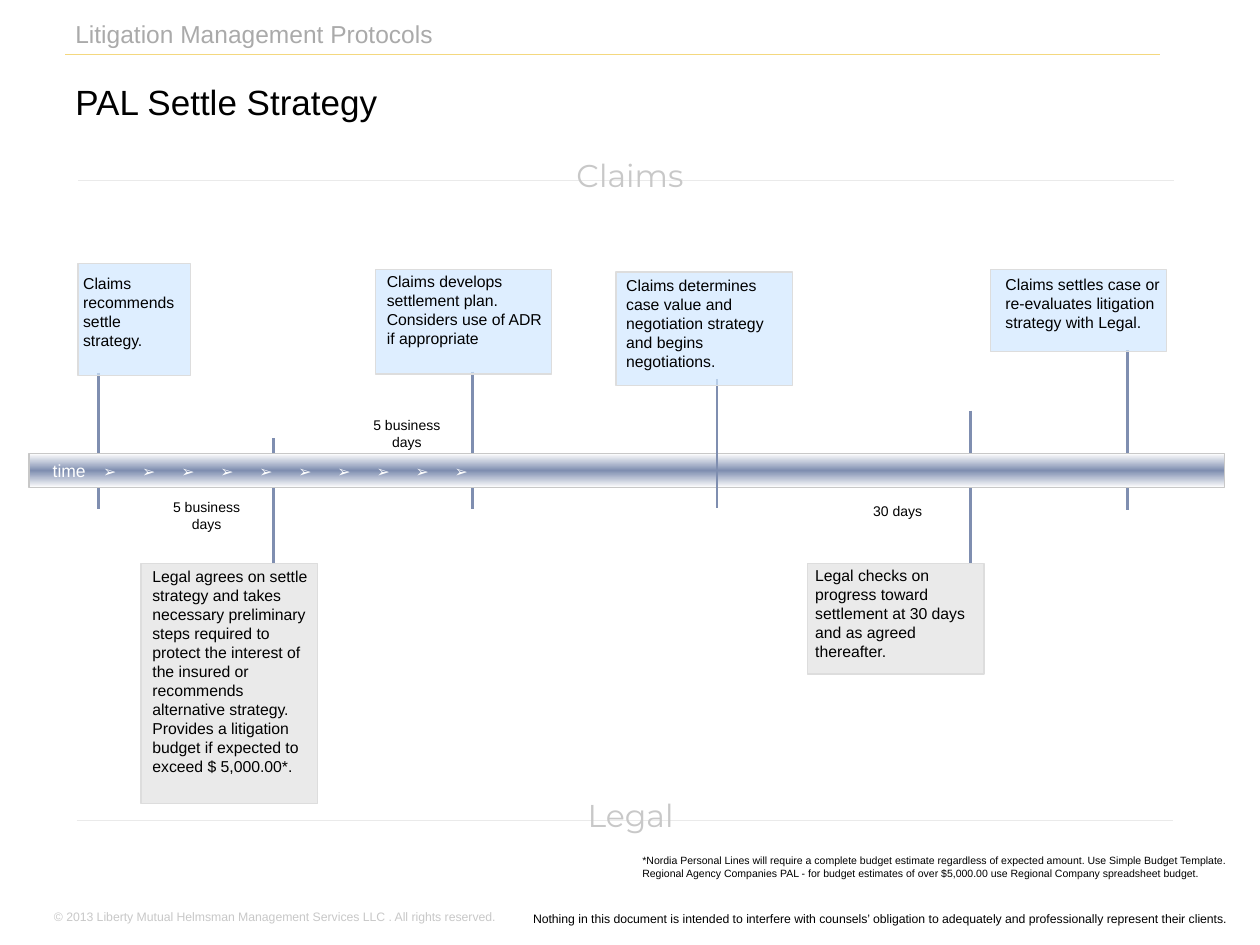
from copy import deepcopy
from dataclasses import dataclass

from pptx import Presentation
from pptx.dml.color import RGBColor
from pptx.enum.shapes import MSO_CONNECTOR as Connector, MSO_SHAPE as Shape
from pptx.enum.text import MSO_ANCHOR as Anchor, PP_ALIGN as Align
from pptx.oxml.ns import qn
from pptx.slide import Slide
from pptx.util import Inches, Pt
from lxml.etree import SubElement

COLORS = {
    "black": "000000", "white": "FFFFFF", "gold": "F4D87F", "heading": "AAAAAA",
    "muted": "C8C8C8", "rule": "EAEAEA", "edge": "DDDDDD", "stem": "7F8EB0",
    "claims": "D1E8FF", "legal": "EAEAEA",
}
OPACITY = {"claims": 70, "legal": 100}


def rgb(name):
    return RGBColor.from_string(COLORS[name])


@dataclass
class TimelineSlide:
    """Draws styled timeline elements on one slide."""

    slide: Slide
    font: str = "Arial"
    stem_width: float = 1.5
    edge_width: float = 0.75

    def style(self, font, size, color):
        font.name, font.size = self.font, Pt(size)
        font.color.rgb = rgb(color)

    def text(self, words, place, size, color="black", align=Align.LEFT,
             anchor=Anchor.TOP, inset=True, font=None):
        label = self.slide.shapes.add_textbox(*map(Inches, place))
        frame = label.text_frame
        frame.word_wrap = True
        frame.vertical_anchor = anchor
        if not inset:
            frame.margin_left = frame.margin_right = 0
            frame.margin_top = frame.margin_bottom = 0
        frame.text = words
        for paragraph in frame.paragraphs:
            paragraph.alignment = align
            for run in paragraph.runs:
                self.style(run.font, size, color)
                run.font.name = font or self.font
        return frame

    def line(self, start, end, color, width):
        rule = self.slide.shapes.add_connector(
            Connector.STRAIGHT, *map(Inches, (*start, *end)))
        rule.line.color.rgb = rgb(color)
        rule.line.width = Pt(width)
        SubElement(rule._element.spPr, qn("a:effectLst"))

    def rectangle(self, place, edge):
        panel = self.slide.shapes.add_shape(Shape.RECTANGLE, *map(Inches, place))
        panel.shadow.inherit = False
        panel.line.color.rgb = rgb(edge)
        panel.line.width = Pt(self.edge_width)
        return panel

    def step(self, side, words, panel_place, words_place, stem):
        x, top, bottom = stem
        self.line((x, top), (x, bottom), "stem", self.stem_width)
        panel = self.rectangle(panel_place, "edge")
        panel.fill.solid()
        panel.fill.fore_color.rgb = rgb(side)
        if OPACITY[side] < 100:
            tint = panel._element.spPr.find(qn("a:solidFill"))[0]
            SubElement(tint, qn("a:alpha"), val=str(OPACITY[side] * 1000))
        self.text(words, words_place, 9, inset=False)

    def time_bar(self, place):
        bar = self.rectangle(place, "muted")
        bar.fill.gradient()
        bar.fill.gradient_angle = 270
        stops = bar._element.spPr.find(qn("a:gradFill")).find(qn("a:gsLst"))
        stops.append(deepcopy(stops[-1]))
        shades = zip(bar.fill.gradient_stops, (0, 0.5, 1), ("white", "stem", "white"))
        for stop, position, color in shades:
            stop.position = position
            stop.color.rgb = rgb(color)

    def time_arrows(self, place, count, first, pitch):
        paragraph = self.text("time", place, 10, "white").paragraphs[0]
        tabs = SubElement(paragraph._p.get_or_add_pPr(), qn("a:tabLst"))
        for i in range(count):
            SubElement(tabs, qn("a:tab"), pos=str(Inches(first + i * pitch)), algn="l")
        arrows = paragraph.add_run()
        arrows.text = "\t➢" * count
        self.style(arrows.font, 9, "white")


STEPS = [
    ("claims", "Claims settles case or re-evaluates litigation strategy with Legal.",
     (7.86, 2.14, 1.4, 0.65), (7.98, 2.18, 1.35, 0.45), (8.95, 2.78, 4.05)),
    ("claims", "Claims recommends settle strategy.",
     (0.62, 2.09, 0.89, 0.89), (0.66, 2.17, 0.78, 0.6), (0.78, 2.96, 4.04)),
    ("legal", "Legal agrees on settle strategy and takes necessary preliminary steps "
     "required to protect the interest of the insured or recommends alternative "
     "strategy. Provides a litigation budget if expected to exceed $ 5,000.00*.",
     (1.12, 4.47, 1.4, 1.91), (1.21, 4.5, 1.26, 1.49), (2.17, 3.48, 4.49)),
    ("claims", "Claims develops settlement plan. Considers use of ADR if appropriate",
     (2.98, 2.14, 1.4, 0.83), (3.07, 2.16, 1.31, 0.6), (3.75, 2.95, 4.04)),
    ("legal", "Legal checks on progress toward settlement at 30 days and as agreed "
     "thereafter.",
     (6.41, 4.47, 1.4, 0.88), (6.47, 4.49, 1.31, 0.75), (7.7, 3.26, 4.48)),
]
NEGOTIATION = (
    "claims", "Claims determines case value and negotiation strategy and begins "
    "negotiations.",
    (4.89, 2.16, 1.4, 0.9), (4.97, 2.19, 1.33, 0.75), (5.69, 3.01, 4.03))
INTERVALS = [
    ("5 business\vdays", (1.05, 3.91, 1.18, 0.37), True),
    ("5 business\vdays", (2.8, 3.31, 0.86, 0.27), False),
    ("30 days", (6.7, 3.94, 0.85, 0.23), True),
]
LANES = [
    ("Legal", (0.14, 6.27, 9.73, 0.4), 0.61, 6.51),
    ("Claims", (0, 1.19, 10, 0.4), 0.62, 1.43),
]
FOOTNOTE = (
    "*Nordia Personal Lines will require a complete budget estimate regardless of "
    "expected amount. Use Simple Budget Template.\n"
    "Regional Agency Companies PAL - for budget estimates of over $5,000.00 use "
    "Regional Company spreadsheet budget.")
DISCLAIMER = (
    "Nothing in this document is intended to interfere with counsels’ obligation to "
    "adequately and professionally represent their clients. ")
COPYRIGHT = ("© 2013 Liberty Mutual Helmsman Management Services LLC . "
             "All rights reserved.")


def main():
    deck = Presentation()
    deck.slide_width, deck.slide_height = Inches(10), Inches(7.5)
    page = TimelineSlide(deck.slides.add_slide(deck.slide_layouts[6]))

    page.line((0.52, 0.43), (9.21, 0.43), "gold", 0.75)
    page.text("Litigation Management Protocols", (0.5, 0.01, 7.17, 0.51), 14,
              "heading", anchor=Anchor.MIDDLE)
    page.text(DISCLAIMER, (3, 7.18, 6.86, 0.22), 7, align=Align.RIGHT)
    page.text(COPYRIGHT, (0.33, 7.17, 6.94, 0.22), 7, "muted")
    page.text("PAL Settle Strategy", (0.5, 0.55, 9, 0.47), 20, anchor=Anchor.BOTTOM)

    for lane, place, left, y in LANES:
        page.line((left, y), (left + 8.7, y), "rule", 0.75)
        page.text(lane, place, 18, "muted", Align.CENTER, font="Montserrat")
    for step in STEPS:
        page.step(*step)
    for interval, place, inset in INTERVALS:
        page.text(interval, place, 8, align=Align.CENTER, inset=inset)

    page.time_bar((0.23, 3.6, 9.49, 0.27))
    page.step(*NEGOTIATION)
    page.time_arrows((0.32, 3.6, 9.35, 0.27), count=10, first=0.4, pitch=0.31)
    page.text(FOOTNOTE, (5, 6.73, 4.97, 0.3), 6)

    deck.save("out.pptx")


if __name__ == "__main__":
    main()
